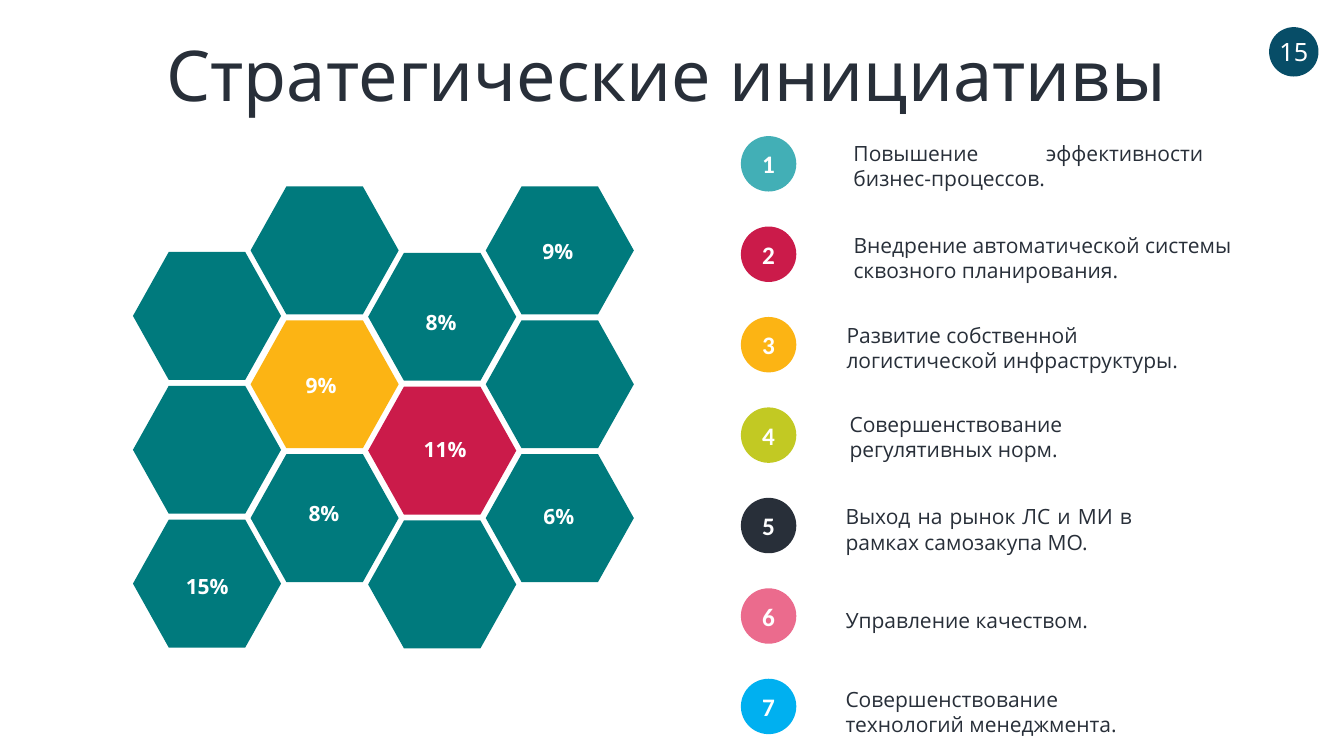
from pptx import Presentation
from pptx.dml.color import RGBColor
from pptx.enum.shapes import MSO_SHAPE
from pptx.enum.text import MSO_ANCHOR, MSO_AUTO_SIZE, PP_ALIGN
from pptx.util import Pt

TITLE = "Стратегические инициативы"
PAGE = "15"
DARK, WHITE, TEAL, RED, YELLOW = "282F39", "FFFFFF", "007A7D", "CB1B4A", "FCB414"
LEFT, CENTER, JUSTIFY = PP_ALIGN.LEFT, PP_ALIGN.CENTER, PP_ALIGN.JUSTIFY

COLUMN_TOPS = [180, 133.2, 180.6, 133.2]
HIGHLIGHTS = {(1, 1): YELLOW, (2, 1): RED}
HEX_LEFT, HEX_STEP_X, HEX_STEP_Y = 95, 84, 95.6
HEX_W, HEX_H = 105.8, 91.4

PERCENTS = [
    ("15%", "Open Sans", 106.6, 406),
    ("9%", "Open Sans", 188, 262.8),
    ("8%", "Noto Sans", 190, 354.2),
    ("8%", "Noto Sans", 273.6, 217.4),
    ("11%", "Noto Sans", 276.5, 308.2),
    ("9%", "Open Sans", 357.1, 167),
    ("6%", "Noto Sans", 357.8, 356.4),
]

INITIATIVES = [
    ("Повышение эффективности бизнес-процессов.", "42AFB6", 602.6, 96.5, 264.2, JUSTIFY),
    ("Внедрение автоматической системы сквозного планирования.", RED, 602.6, 162.7, 339.8, LEFT),
    ("Развитие собственной логистической инфраструктуры.", YELLOW, 597.6, 226.8, 264.2, LEFT),
    ("Совершенствование регулятивных норм.", "C2C923", 599.8, 290.2, 218.9, JUSTIFY),
    ("Выход на рынок ЛС и МИ в рамках самозакупа МО.", DARK, 596.9, 356.4, 218.9, JUSTIFY),
    ("Управление качеством.", "EB6B8D", 596.9, 430.6, 218.9, JUSTIFY),
    ("Совершенствование технологий менеджмента.", "00B0F0", 596.9, 486.7, 218.9, JUSTIFY),
]
BADGE_LEFT, BADGE_TOP, BADGE_STEP, BADGE_SIZE = 529.2, 97.2, 64.6, 39.6


def rgb(value):
    return RGBColor.from_string(value)


def write(sp, text, font, size, color, align=CENTER, bold=False):
    p = sp.text_frame.paragraphs[0]
    p.text = text
    p.alignment = align
    p.font.name = font
    p.font.size = Pt(size)
    p.font.bold = bold
    p.font.color.rgb = rgb(color)


def add_text(s, box, *style, **options):
    sp = s.shapes.add_textbox(*map(Pt, box))
    tf = sp.text_frame
    tf.word_wrap = True
    tf.auto_size = MSO_AUTO_SIZE.SHAPE_TO_FIT_TEXT
    write(sp, *style, **options)


def add_figure(s, kind, box, color):
    sp = s.shapes.add_shape(kind, *map(Pt, box))
    sp.shadow.inherit = False
    sp.fill.solid()
    sp.fill.fore_color.rgb = rgb(color)
    sp.line.fill.background()
    sp.text_frame.vertical_anchor = MSO_ANCHOR.MIDDLE
    return sp


def main():
    prs = Presentation()
    prs.slide_width, prs.slide_height = Pt(960), Pt(540)
    s = prs.slides.add_slide(prs.slide_layouts[6])

    sp = add_figure(s, MSO_SHAPE.OVAL, (906.5, 19.4, 35.3, 35.3), "074D67")
    sp.text_frame.word_wrap = False
    write(sp, PAGE, "Noto Sans", 18, WHITE)
    add_text(s, (95, 18.7, 761.8, 67.7), TITLE, "Noto Sans", 50, DARK)

    for col, first_top in enumerate(COLUMN_TOPS):
        for row in range(3):
            box = (HEX_LEFT + col * HEX_STEP_X, first_top + row * HEX_STEP_Y, HEX_W, HEX_H)
            sp = add_figure(s, MSO_SHAPE.HEXAGON, box, HIGHLIGHTS.get((col, row), TEAL))
            sp.adjustments[0] = 0.28

    for text, font, left, top in PERCENTS:
        add_text(s, (left, top, 82.8, 25.2), text, font, 15, WHITE, bold=True)

    for i, (text, color, left, top, width, align) in enumerate(INITIATIVES):
        box = (BADGE_LEFT, BADGE_TOP + i * BADGE_STEP, BADGE_SIZE, BADGE_SIZE)
        sp = add_figure(s, MSO_SHAPE.OVAL, box, color)
        write(sp, str(i + 1), "Calibri", 18, WHITE, bold=True)
        height = 25.2 if text.startswith("Управление") else 43.9
        add_text(s, (left, top, width, height), text, "Open Sans", 15, DARK, align)

    prs.save("out.pptx")


if __name__ == "__main__":
    main()
